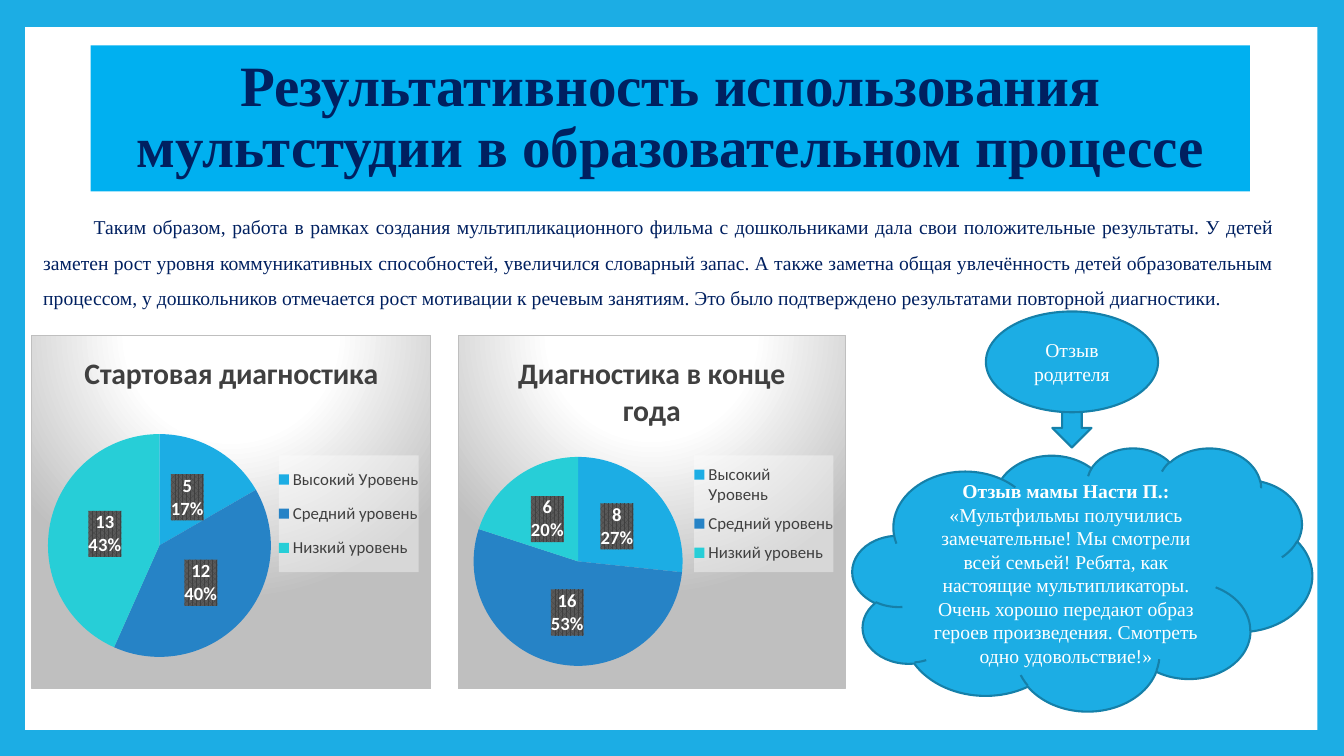
from lxml.etree import SubElement
from pptx import Presentation
from pptx.chart.data import CategoryChartData
from pptx.dml.color import RGBColor
from pptx.enum.chart import XL_CHART_TYPE, XL_LABEL_POSITION, XL_LEGEND_POSITION
from pptx.enum.shapes import MSO_SHAPE
from pptx.enum.text import MSO_ANCHOR, PP_ALIGN
from pptx.oxml import parse_xml
from pptx.oxml.ns import nsdecls, qn
from pptx.util import Pt

COLORS = {
    "sky": "1CADE4", "blue": "2683C6", "teal": "27CED7", "outline": "1580A9",
    "banner": "00B0F0", "navy": "002060", "white": "FFFFFF",
    "charcoal": "404040", "graphite": "595959", "silver": "BFBFBF",
}
SERIF, SANS = "Times New Roman", "Calibri"
LEVELS = ["Высокий Уровень", "Средний уровень", "Низкий уровень"]


class SlideBuilder:
    def __init__(self, slide):
        self.slide = slide

    def color(self, name):
        return RGBColor.from_string(COLORS[name])

    def style_font(self, font, family, size, color, bold=False):
        font.name, font.size, font.bold = family, Pt(size), bold
        font.color.rgb = self.color(color)

    def add_runs(self, frame, runs, size, color, align=PP_ALIGN.CENTER, spacing=1.0):
        """Fill a text frame with one paragraph of (text, bold) runs."""
        frame.word_wrap = True
        paragraph = frame.paragraphs[0]
        paragraph.alignment, paragraph.line_spacing = align, spacing
        for text, bold in runs:
            run = paragraph.add_run()
            run.text = text
            self.style_font(run.font, SERIF, size, color, bold)
        return paragraph

    def add_shape(self, kind, box, fill, line=None):
        shape = self.slide.shapes.add_shape(kind, *map(Pt, box))
        shape.shadow.inherit = False
        shape.fill.solid()
        shape.fill.fore_color.rgb = self.color(fill)
        if line:
            shape.line.color.rgb = self.color(line)
            shape.line.width = Pt(1.5)
        else:
            shape.line.fill.background()
        shape.text_frame.vertical_anchor = MSO_ANCHOR.MIDDLE
        return shape

    def add_callout(self, kind, box, runs=()):
        shape = self.add_shape(kind, box, "sky", "outline")
        self.add_runs(shape.text_frame, runs, 14, "white")

    def add_text(self, box, text, left_indent, first_indent):
        frame = self.slide.shapes.add_textbox(*map(Pt, box)).text_frame
        paragraph = self.add_runs(frame, [(text, False)], 14, "navy", PP_ALIGN.JUSTIFY, 1.5)
        properties = paragraph._p.get_or_add_pPr()
        properties.set("marL", str(Pt(left_indent)))
        properties.set("indent", str(Pt(first_indent)))

    def chart_fill(self, content):
        return parse_xml(f'<c:spPr {nsdecls("c", "a")}>{content}</c:spPr>')

    def chart_layout(self, box, inner=False):
        layout = parse_xml(f'<c:layout {nsdecls("c")}><c:manualLayout/></c:layout>')
        values = {"layoutTarget": "inner"} if inner else {}
        values.update(xMode="edge", yMode="edge")
        values.update(zip("xywh", box))
        for tag, value in values.items():
            SubElement(layout[0], qn(f"c:{tag}")).set("val", str(value))
        return layout

    def add_pie(self, box, title, values, pie_box, legend_box):
        data = CategoryChartData()
        data.categories = LEVELS
        data.add_series(title, values)
        chart = self.slide.shapes.add_chart(XL_CHART_TYPE.PIE, *map(Pt, box), data).chart
        self.style_font(chart.font, SANS, 12, "charcoal")

        # Title
        chart.has_title = True
        run = chart.chart_title.text_frame.paragraphs[0].add_run()
        run.text = title
        self.style_font(run.font, SANS, 21.3, "charcoal", True)
        chart.chart_title.include_in_layout = False

        # Slices
        chart.plots[0].vary_by_categories = True
        series = chart.plots[0].series[0]
        for index, name in enumerate(("sky", "blue", "teal")):
            fill = series.points[index].format.fill
            fill.solid()
            fill.fore_color.rgb = self.color(name)

        # Value and percentage labels on a patterned box
        labels = series.data_labels
        labels.show_value = labels.show_percentage = True
        labels.position = XL_LABEL_POSITION.CENTER
        self.style_font(labels.font, SANS, 13.3, "white", True)
        element = labels._element
        element.find(qn("c:txPr")).addprevious(self.chart_fill(
            '<a:pattFill prst="pct75">'
            f'<a:fgClr><a:srgbClr val="{COLORS["charcoal"]}"/></a:fgClr>'
            f'<a:bgClr><a:srgbClr val="{COLORS["graphite"]}"/></a:bgClr></a:pattFill>'))
        separator = parse_xml(f'<c:separator {nsdecls("c")}>\n</c:separator>')
        last_flag = element.find(qn("c:showBubbleSize"))
        if last_flag is None:
            last_flag = element.find(qn("c:showPercent"))
        last_flag.addnext(separator)

        # Legend on a translucent panel
        chart.has_legend = True
        legend = chart.legend
        legend.position = XL_LEGEND_POSITION.RIGHT
        legend.include_in_layout = False
        self.style_font(legend.font, SANS, 12, "charcoal")
        element = legend._element
        for old in element.findall(qn("c:layout")):
            element.remove(old)
        element.find(qn("c:legendPos")).addnext(self.chart_layout(legend_box))
        element.find(qn("c:txPr")).addprevious(self.chart_fill(
            f'<a:solidFill><a:srgbClr val="{COLORS["white"]}">'
            '<a:alpha val="39000"/></a:srgbClr></a:solidFill>'))

        # Plot position, gradient background and border
        chart_element = chart._chartSpace.find(qn("c:chart"))
        plot_area = chart_element.find(qn("c:plotArea"))
        for old in plot_area.findall(qn("c:layout")):
            plot_area.remove(old)
        plot_area.insert(0, self.chart_layout(pie_box, inner=True))
        stops = "".join(
            f'<a:gs pos="{position * 1000}"><a:srgbClr val="{COLORS[name]}"/></a:gs>'
            for position, name in ((0, "white"), (39, "white"), (100, "silver")))
        chart_element.addnext(self.chart_fill(
            f'<a:gradFill><a:gsLst>{stops}</a:gsLst><a:path path="circle">'
            '<a:fillToRect l="50000" t="-80000" r="50000" b="180000"/></a:path></a:gradFill>'
            f'<a:ln w="{Pt(0.75)}"><a:solidFill><a:srgbClr val="{COLORS["silver"]}"/>'
            '</a:solidFill></a:ln>'))


def main():
    presentation = Presentation()
    presentation.slide_width, presentation.slide_height = Pt(960), Pt(540)
    slide = presentation.slides.add_slide(presentation.slide_layouts[6])
    builder = SlideBuilder(slide)

    # Blue frame around a white page
    slide.background.fill.solid()
    slide.background.fill.fore_color.rgb = builder.color("sky")
    builder.add_shape(MSO_SHAPE.RECTANGLE, (18, 19.4, 923, 502), "white")

    # Summary and title
    builder.add_text(
        (20.2, 141.8, 897, 386),
        "Таким образом, работа в рамках создания мультипликационного фильма с дошкольниками "
        "дала свои положительные результаты. У детей заметен рост уровня коммуникативных "
        "способностей, увеличился словарный запас. А также заметна общая увлечённость детей "
        "образовательным процессом, у дошкольников отмечается рост мотивации к речевым "
        "занятиям. Это было подтверждено результатами повторной диагностики.", 3.6, 36)
    banner = builder.add_shape(MSO_SHAPE.RECTANGLE, (64.8, 32.4, 828, 104.4), "banner")
    title = "Результативность использования мультстудии в образовательном процессе"
    builder.add_runs(banner.text_frame, [(title, True)], 40.7, "navy", spacing=0.9)

    # Parent's review
    builder.add_callout(MSO_SHAPE.CLOUD, (609, 319.7, 328.3, 188), [
        ("Отзыв мамы Насти П.: ", True),
        ("«Мультфильмы получились замечательные! Мы смотрели всей семьей! Ребята, как "
         "настоящие мультипликаторы. Очень хорошо передают образ героев произведения. "
         "Смотреть одно удовольствие!»", False)])
    builder.add_callout(MSO_SHAPE.DOWN_ARROW, (751.7, 260, 28, 59.7))
    builder.add_callout(MSO_SHAPE.OVAL, (704.2, 222.5, 123, 72), [("Отзыв родителя", False)])

    # Diagnostics at the start and at the end of the year
    builder.add_pie((22.3, 239, 285.8, 253.4), "Стартовая диагностика", (5, 12, 13),
                    (0.04, 0.28, 0.56, 0.63), (0.63, 0.34, 0.35, 0.33))
    builder.add_pie((326.9, 239, 277.2, 253.4), "Диагностика в конце года", (8, 16, 6),
                    (0.04, 0.34, 0.54, 0.6), (0.62, 0.34, 0.36, 0.33))

    presentation.save("out.pptx")


if __name__ == "__main__":
    main()
